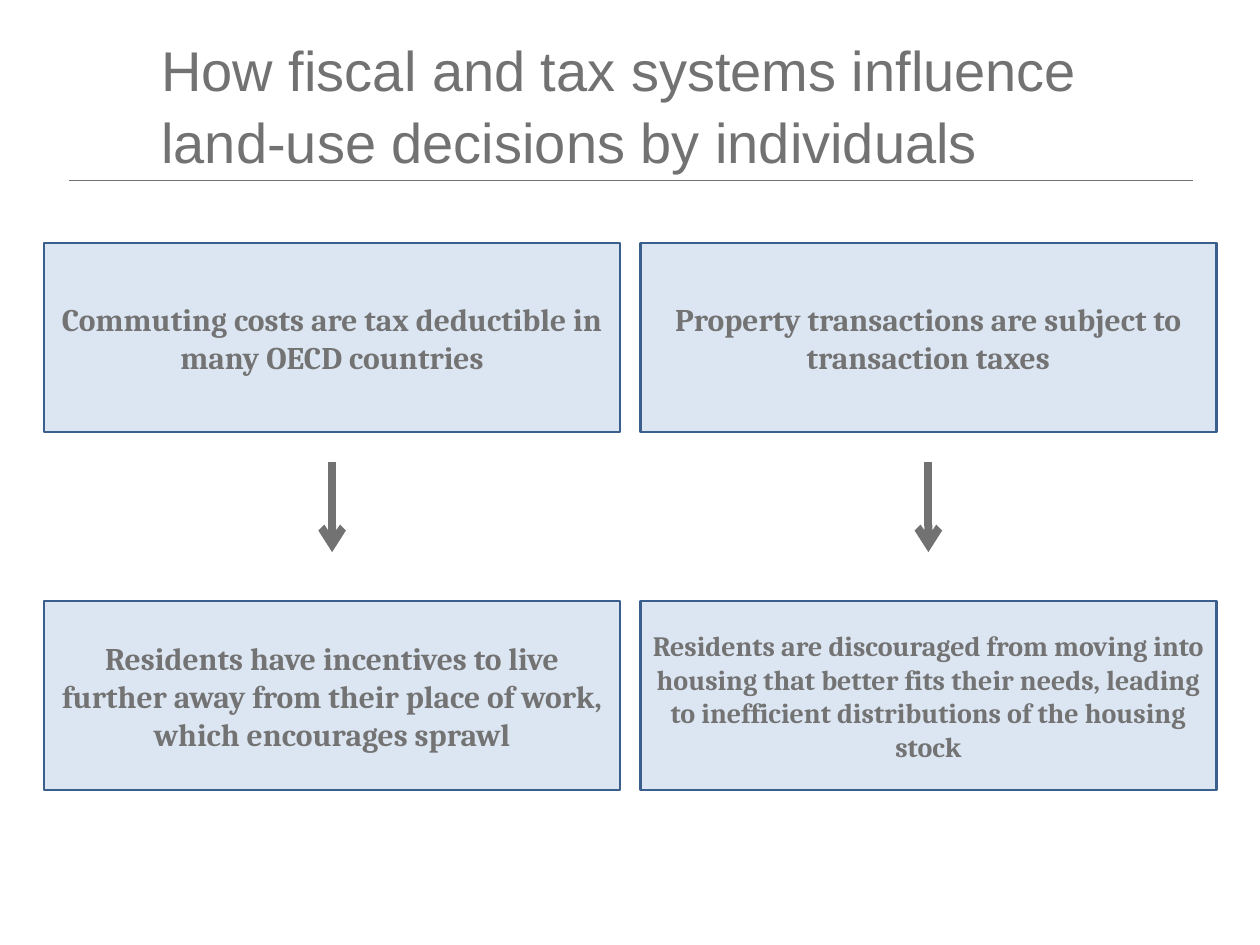
"""Build a slide on how tax systems influence land-use decisions."""
from dataclasses import dataclass

from lxml import etree
from pptx import Presentation
from pptx.dml.color import RGBColor
from pptx.enum.shapes import MSO_CONNECTOR, MSO_SHAPE
from pptx.enum.text import MSO_ANCHOR, MSO_AUTO_SIZE, PP_ALIGN
from pptx.oxml.ns import qn
from pptx.util import Cm, Pt

RECT = MSO_SHAPE.RECTANGLE
LINE = MSO_CONNECTOR.STRAIGHT
MIDDLE = MSO_ANCHOR.MIDDLE
LEFT, CENTER = PP_ALIGN.LEFT, PP_ALIGN.CENTER
NO_FIT = MSO_AUTO_SIZE.NONE

GREY, INK, BLUE, PALE = "727272", "737373", "3A5F8C", "DCE6F2"
WIDE, HIGH = 11.61, 3.81
EDGE, STEP = 0.89, 12.02
CAUSE_TOP, EFFECT_TOP = 4.9, 12.12
ARROW_TOP, ARROW_END = 9.32, 11.13


@dataclass
class Chain:
    """A cause and its effect, stacked in one column."""
    cause: str
    effect: str
    size: int


CHAINS = [
    Chain("Commuting costs are tax deductible in many OECD countries",
          "Residents have incentives to live further away from their place "
          "of work, which encourages sprawl", 18),
    Chain("Property transactions are subject to transaction taxes",
          "Residents are discouraged from moving into housing that better "
          "fits their needs, leading to inefficient distributions of the "
          "housing stock", 16),
]


def color(code: str) -> RGBColor:
    """Turn a hex string into a colour."""
    return RGBColor.from_string(code)


def add_title(slide, text: str) -> None:
    """Place and format the title."""
    title = slide.shapes.title
    title.left, title.top = Cm(3), Cm(0.66)
    title.width, title.height = Cm(20.6), Cm(2.84)
    frame = title.text_frame
    frame.text = text
    frame.auto_size = NO_FIT
    frame.vertical_anchor = MIDDLE
    para = frame.paragraphs[0]
    para.alignment = LEFT
    para.line_spacing = 1.06
    para.font.name, para.font.size = "Arial", Pt(32)
    para.font.color.rgb = color(GREY)


def add_line(slide, x1: float, y1: float, x2: float, y2: float,
             width: float, arrow: bool = False) -> None:
    """Draw a straight grey line, with an arrowhead if asked."""
    line = slide.shapes.add_connector(LINE, Cm(x1), Cm(y1), Cm(x2), Cm(y2))
    line.line.color.rgb = color(GREY)
    line.line.width = Pt(width)
    props = line._element.spPr
    if arrow:
        etree.SubElement(props.find(qn("a:ln")), qn("a:tailEnd"), type="arrow")
    etree.SubElement(props, qn("a:effectLst"))


def add_box(slide, left: float, top: float, text: str, size: int) -> None:
    """Draw a pale box with bold centred text."""
    box = slide.shapes.add_shape(RECT, Cm(left), Cm(top), Cm(WIDE), Cm(HIGH))
    box.shadow.inherit = False
    box.fill.solid()
    box.fill.fore_color.rgb = color(PALE)
    box.line.color.rgb = color(BLUE)
    box.line.width = Pt(1.5)
    frame = box.text_frame
    frame.text = text
    frame.word_wrap = True
    frame.vertical_anchor = MIDDLE
    para = frame.paragraphs[0]
    para.alignment = CENTER
    para.font.name, para.font.size = "Cambria", Pt(size)
    para.font.bold = True
    para.font.color.rgb = color(INK)


def add_chain(slide, left: float, chain: Chain) -> None:
    """Draw a cause, an arrow and an effect."""
    mid = left + WIDE / 2
    add_box(slide, left, CAUSE_TOP, chain.cause, 18)
    add_line(slide, mid, ARROW_TOP, mid, ARROW_END, 4.5, arrow=True)
    add_box(slide, left, EFFECT_TOP, chain.effect, chain.size)


def main() -> None:
    """Build and save the slide."""
    deck = Presentation()
    deck.slide_width, deck.slide_height = Cm(25.4), Cm(19.05)
    slide = deck.slides.add_slide(deck.slide_layouts[5])
    add_title(slide, "How fiscal and tax systems influence land-use "
                     "decisions by individuals")
    add_line(slide, 1.4, 3.63, 24.05, 3.63, 0.5)
    for i, chain in enumerate(CHAINS):
        add_chain(slide, EDGE + i * STEP, chain)
    deck.save("out.pptx")


if __name__ == "__main__":
    main()
